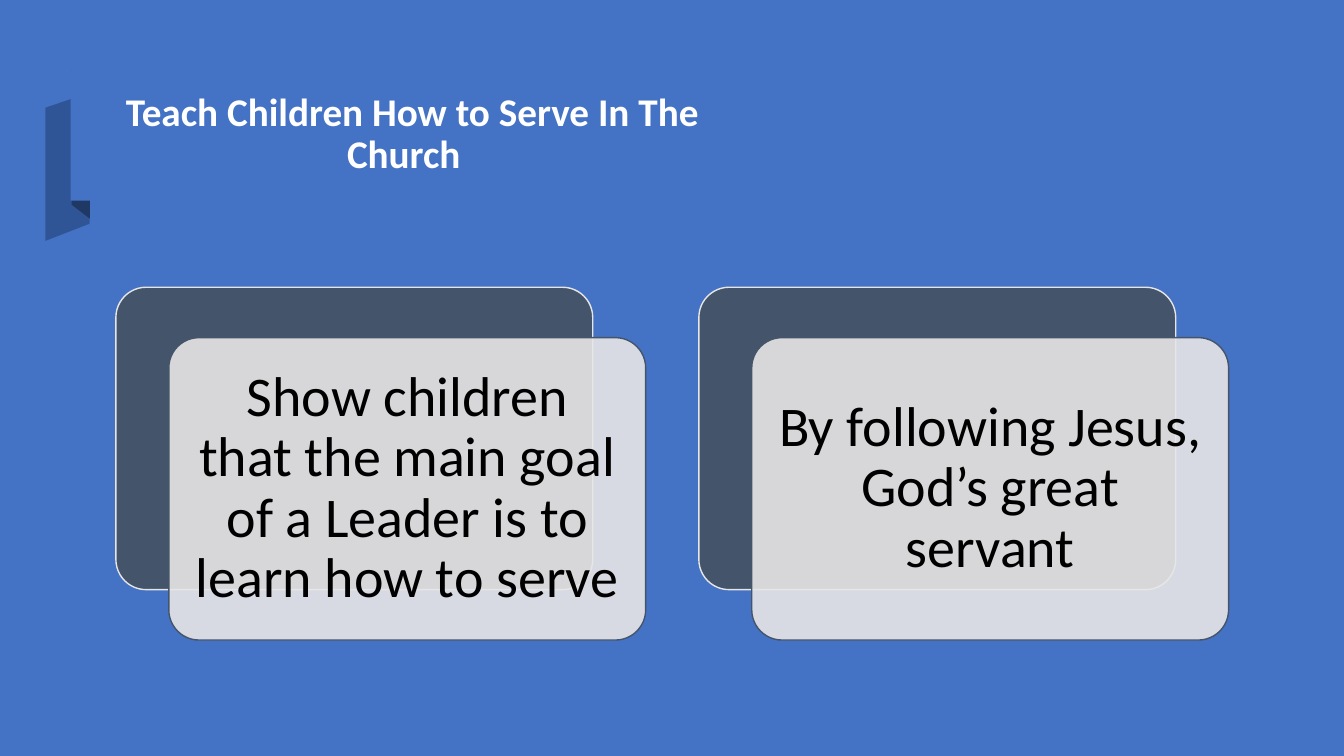
from lxml import etree
from pptx import Presentation
from pptx import util as u
from pptx.dml.color import RGBColor
from pptx.enum import shapes, text
from pptx.oxml.ns import qn

HEX = {
    "blue": "4472C4",
    "fold": "2F5597",
    "deep": "203864",
    "slate": "44546A",
    "pale": "E7E6E6",
    "white": "FFFFFF",
    "black": "000000",
}
FOLDS = [
    ("fold", [(64.1, 159.8), (32.4, 172.1), (32.4, 77), (64.1, 66.2)]),
    ("deep", [(64.1, 156.2), (51.1, 146.2), (51.1, 50.4), (64.1, 61.2)]),
]
TITLE = ["Teach Children How to Serve In The", "Church"]
CARDS = [
    "Show children that the main goal of a Leader is to learn how to serve",
    "By following Jesus, God’s great servant",
]
LEFT, TOP, WIDE, HIGH = 82.8, 205.2, 340.6, 216
PITCH = 416.4
SHIFT = (37.8, 36)


def color(name):
    return RGBColor.from_string(HEX[name])


def paint(shape, fill, line=None, alpha=None):
    """Set fill and outline; alpha is the opacity in percent."""
    shape.shadow.inherit = False
    shape.fill.solid()
    shape.fill.fore_color.rgb = color(fill)
    if alpha:
        tint = shape.fill._xPr.find(qn("a:solidFill"))[0]
        etree.SubElement(tint, qn("a:alpha"), val=str(alpha * 1000))
    if line:
        shape.line.color.rgb = color(line)
        shape.line.width = u.Pt(1)
    else:
        shape.line.fill.background()


def add_fold(slide, fill, points):
    first, *rest = [(u.Pt(x), u.Pt(y)) for x, y in points]
    form = slide.shapes.build_freeform(*first)
    form.add_line_segments(rest)
    paint(form.convert_to_shape(), fill)


def add_box(slide, kind, box, fill, line=None, alpha=None):
    shape = slide.shapes.add_shape(kind, *map(u.Pt, box))
    paint(shape, fill, line, alpha)
    return shape


def add_run(para, words, size, tone, bold=False):
    run = para.add_run()
    run.text = words
    font = run.font
    font.name, font.size, font.bold = "Calibri", u.Pt(size), bold
    font.color.rgb = color(tone)


def add_title(slide, lines):
    """Write the title with every line after the first set further in."""
    box = slide.shapes.add_textbox(*map(u.Pt, (82.8, 61.9, 909.4, 69.1)))
    frame = box.text_frame
    frame.word_wrap = True
    frame.vertical_anchor = text.MSO_ANCHOR.MIDDLE
    para = frame.paragraphs[0]
    para.line_spacing = 0.9
    props = para._p.get_or_add_pPr()
    props.set("marL", str(u.Pt(158)))
    props.set("indent", str(-u.Pt(158)))
    for i, line in enumerate(lines):
        if i:
            para.add_line_break()
        add_run(para, line, 28, "white", True)


def add_card(slide, left, words):
    """Draw a dark plate with a pale, shifted text plate over it."""
    kind = shapes.MSO_SHAPE.ROUNDED_RECTANGLE
    back = add_box(slide, kind, (left, TOP, WIDE, HIGH), "slate", "pale")
    spot = (left + SHIFT[0], TOP + SHIFT[1], WIDE, HIGH)
    front = add_box(slide, kind, spot, "pale", "slate", 90)
    for plate in (back, front):
        plate.adjustments[0] = 0.1
    frame = front.text_frame
    frame.word_wrap = True
    frame.vertical_anchor = text.MSO_ANCHOR.MIDDLE
    frame.margin_left = frame.margin_right = u.Pt(12)
    frame.margin_top = frame.margin_bottom = u.Pt(12)
    para = frame.paragraphs[0]
    para.alignment = text.PP_ALIGN.CENTER
    para.line_spacing = 0.9
    add_run(para, words, 40, "black")


def main():
    deck = Presentation()
    deck.slide_width, deck.slide_height = u.Pt(960), u.Pt(540)
    slide = deck.slides.add_slide(deck.slide_layouts[6])
    ground = slide.background.fill
    ground.solid()
    ground.fore_color.rgb = color("blue")
    for fill, points in FOLDS:
        add_fold(slide, fill, points)
    band = (50.4, 50.4, 909.6, 92.9)
    add_box(slide, shapes.MSO_SHAPE.RECTANGLE, band, "blue")
    add_title(slide, TITLE)
    for i, words in enumerate(CARDS):
        add_card(slide, LEFT + i * PITCH, words)
    deck.save("out.pptx")


if __name__ == "__main__":
    main()
